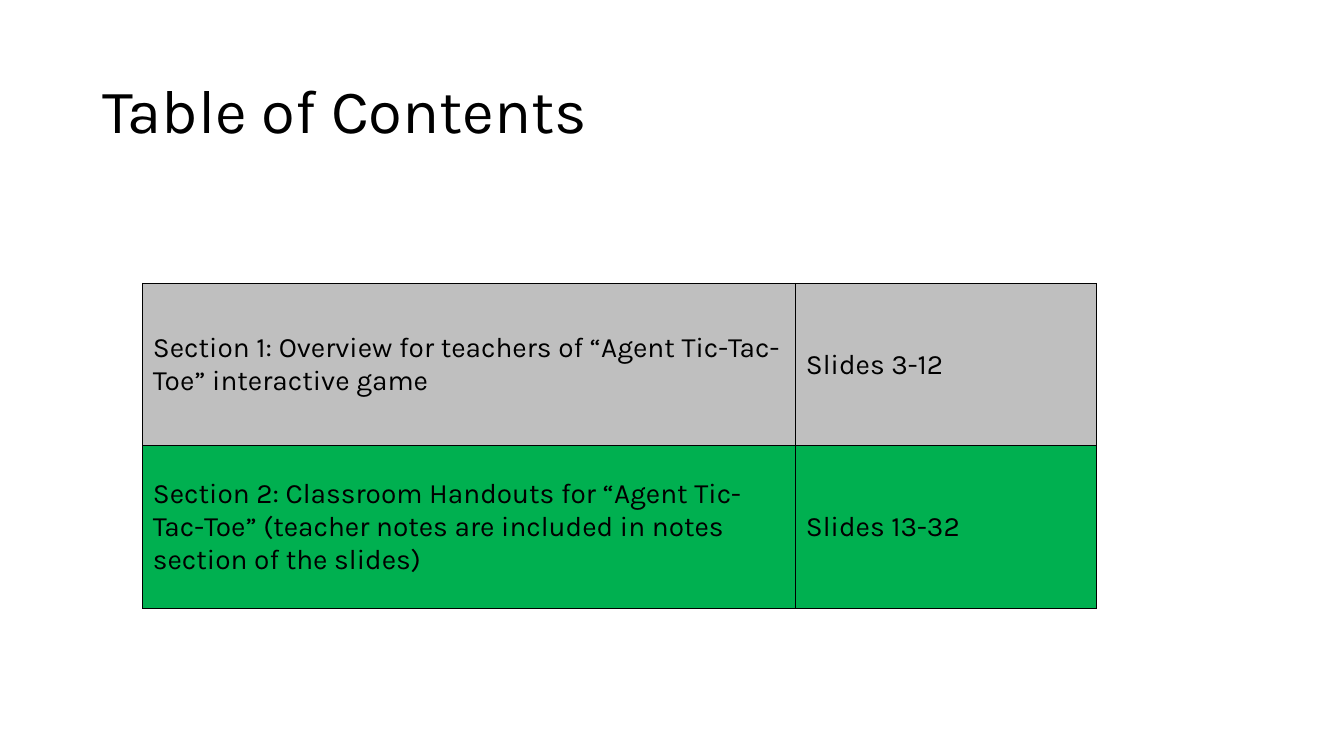
from lxml.etree import SubElement
from pptx import Presentation
from pptx.dml.color import RGBColor
from pptx.enum.text import MSO_ANCHOR, MSO_AUTO_SIZE, PP_ALIGN
from pptx.oxml.ns import qn
from pptx.util import Pt

BLACK = RGBColor(0x00, 0x00, 0x00)
GREY = RGBColor(0xBF, 0xBF, 0xBF)
GREEN = RGBColor(0x00, 0xB0, 0x50)
FONT = "Karla"

SECTIONS = [
    ("Section 1: Overview for teachers of “Agent Tic-Tac-Toe” interactive game",
     "Slides 3-12", GREY),
    ("Section 2: Classroom Handouts for “Agent Tic-Tac-Toe” "
     "(teacher notes are included in notes section of the slides)",
     "Slides 13-32", GREEN),
]


def style_paragraph(paragraph, size):
    """Apply the slide's font and colour at the given size."""
    paragraph.font.name = FONT
    paragraph.font.size = Pt(size)
    paragraph.font.color.rgb = BLACK
    paragraph.alignment = PP_ALIGN.LEFT


def outline_cell(cell):
    """Draw a thin black line on all four sides of a cell."""
    properties = cell._tc.get_or_add_tcPr()
    for position, side in enumerate(("a:lnL", "a:lnR", "a:lnT", "a:lnB")):
        border = SubElement(properties, qn(side), w=str(Pt(1)))
        fill = SubElement(border, qn("a:solidFill"))
        SubElement(fill, qn("a:srgbClr"), val=str(BLACK))
        properties.insert(position, border)


def place_heading(slide, left, top, width, height):
    """Fill the title placeholder and fit it to the box."""
    heading = slide.shapes.title
    heading.left, heading.top = Pt(left), Pt(top)
    heading.width, heading.height = Pt(width), Pt(height)
    frame = heading.text_frame
    frame.text = "Table of Contents"
    frame.word_wrap = True
    frame.auto_size = MSO_AUTO_SIZE.NONE
    frame.vertical_anchor = MSO_ANCHOR.MIDDLE
    paragraph = frame.paragraphs[0]
    style_paragraph(paragraph, 44)
    paragraph.line_spacing = 0.9


def place_contents(slide, left, top, width, height):
    """Build the table of sections and slide ranges in the box."""
    contents = slide.shapes.add_table(
        len(SECTIONS), 2, Pt(left), Pt(top), Pt(width), Pt(height)).table
    contents.first_row = contents.horz_banding = False
    range_width = 214.5
    contents.columns[0].width = Pt(width - range_width)
    contents.columns[1].width = Pt(range_width)
    for row, (section, slide_range, colour) in enumerate(SECTIONS):
        for column, wording in enumerate((section, slide_range)):
            cell = contents.cell(row, column)
            cell.text = wording
            cell.vertical_anchor = MSO_ANCHOR.MIDDLE
            cell.fill.solid()
            cell.fill.fore_color.rgb = colour
            style_paragraph(cell.text_frame.paragraphs[0], 20)
            outline_cell(cell)


def main():
    """Create the contents slide and save it."""
    presentation = Presentation()
    presentation.slide_width, presentation.slide_height = Pt(960), Pt(540)
    slide = presentation.slides.add_slide(presentation.slide_layouts[5])
    place_heading(slide, 66, 28.75, 828, 104.4)
    place_contents(slide, 102, 202.5, 681, 232)
    presentation.save("out.pptx")


if __name__ == "__main__":
    main()
